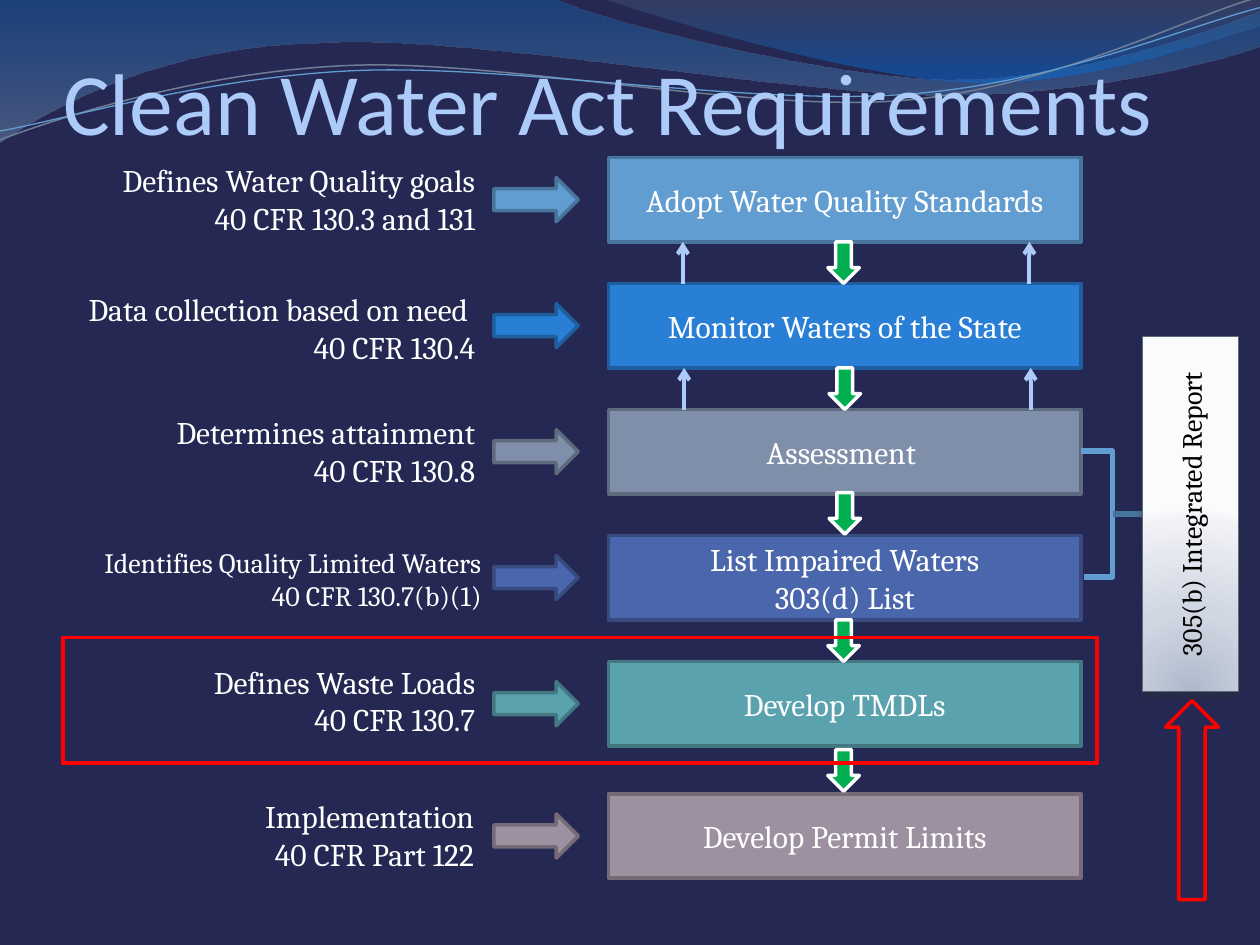
from math import cos, radians, sin

from pptx import Presentation
from pptx.dml.color import RGBColor
from pptx.enum.shapes import MSO_CONNECTOR, MSO_SHAPE
from pptx.enum.text import MSO_ANCHOR, PP_ALIGN
from pptx.oxml import parse_xml
from pptx.oxml.ns import nsdecls, qn
from pptx.util import Pt

PX = 9144
INK = {
    "back": "242852", "title": "ACCBF9", "white": "FFFFFF", "black": "000000",
    "green": "00B050", "red": "FF0000", "link": "629DD1", "stub": "47749C",
    "rim": "5D6A7D", "shade": "2C323C", "gray": "707E95",
    "adopt": "629DD1", "adopt rim": "49749B",
    "watch": "297FD5", "watch rim": "1E5E9E",
    "assess": "7F8FA9", "assess rim": "5E6A7D",
    "list": "4A66AC", "list rim": "374B7F",
    "load": "5AA2AE", "load rim": "437881",
    "permit": "9D90A0", "permit rim": "746B76",
}
RGB = {name: RGBColor.from_string(code) for name, code in INK.items()}

deck = Presentation()
deck.slide_width, deck.slide_height = 1000 * PX, 750 * PX
slide = deck.slides.add_slide(deck.slide_layouts[5])
slide.background.fill.solid()
slide.background.fill.fore_color.rgb = RGB["back"]
shapes = slide.shapes


def form(kind, spot, fill, edge, wide=2):
    shape = shapes.add_shape(kind, *[n * PX for n in spot])
    shape.shadow.inherit = False
    if fill:
        shape.fill.solid()
        shape.fill.fore_color.rgb = RGB[fill]
    else:
        shape.fill.background()
    shape.line.color.rgb = RGB[edge]
    shape.line.width = Pt(wide)
    return shape


def write(shape, lines, size, align, ink="white", font="Cambria"):
    frame = shape.text_frame
    frame.word_wrap = True
    for i, line in enumerate(lines):
        para = frame.add_paragraph() if i else frame.paragraphs[0]
        para.alignment = align
        run = para.add_run()
        run.text = line
        run.font.size = Pt(size)
        run.font.name = font
        run.font.color.rgb = RGB[ink]
    return frame


DOWN = '<a:lin ang="5400000" scaled="0"/>'
waves = [
    ((-1, -1, 1002, 114), 0,
     [("M", 0, 0), ("L", 440, -1), ("C", 476, 17, 664, 63, 758, 63),
      ("C", 853, 63, 958, 26, 1000, 9), ("L", 1001, 36), ("C", 983, 44, 870, 76, 746, 75),
      ("C", 622, 75, 382, 28, 257, 34), ("C", 129, 36, 46, 83, -1, 113), ("L", 0, 0), ("Z",)],
     [(0, "125EAA", 45), (100, "697FA4", 55)], None, 0),
    ((479, -1, 521, 70), 0,
     [("M", 479, -1), ("C", 509, 11, 682, 62, 769, 65), ("C", 856, 69, 961, 32, 1000, 21),
      ("L", 1000, 0), ("L", 479, -1), ("Z",)],
     [(0, "596982", 30), (80, "0670DA", 45)], None, 0),
    ((-2, 22, 1002, 71), -2.7,
     [("M", 0, 111), ("C", 48, 93, 158, 57, 277, 52), ("C", 395, 47, 593, 89, 713, 80),
      ("C", 833, 71, 938, 15, 998, -2)], None, "gray", 0.85),
    ((-2, 30, 1003, 58), -2.7,
     [("M", 0, 104), ("C", 47, 96, 164, 61, 283, 56), ("C", 403, 51, 597, 84, 717, 75),
      ("C", 836, 67, 941, 21, 1000, 6)], None, "link", 0.75),
]
TAGS = {"M": "moveTo", "L": "lnTo", "C": "cubicBezTo", "Z": "close"}
master = deck.slide_master.shapes._spTree
blends = []
for rank, (spot, turn, moves, stops, edge, wide) in enumerate(waves):
    left, top, width, height = spot
    mx, my, bend = left + width / 2, top + height / 2, radians(-turn)
    track = ""
    for tag, *nums in moves:
        dots = ""
        for x, y in zip(nums[::2], nums[1::2]):
            px = mx + (x - mx) * cos(bend) - (y - my) * sin(bend) - left
            py = my + (x - mx) * sin(bend) + (y - my) * cos(bend) - top
            dots += f'<a:pt x="{round(px * PX)}" y="{round(py * PX)}"/>'
        track += f"<a:{TAGS[tag]}>{dots}</a:{TAGS[tag]}>"
    pen = shapes.build_freeform(left, top, scale=PX)
    pen.add_line_segments([(left + width, top + height)], close=False)
    wave = pen.convert_to_shape()
    geom = wave._element.spPr.find(qn("a:custGeom"))
    geom.replace(geom.find(qn("a:pathLst")), parse_xml(
        f'<a:pathLst {nsdecls("a")}><a:path w="{width * PX}" h="{height * PX}">'
        f'{track}</a:path></a:pathLst>'))
    wave.rotation = turn
    wave.shadow.inherit = False
    wave.fill.background()
    if stops:
        wave.line.fill.background()
        blends.append((wave, stops, DOWN))
    else:
        wave.line.color.rgb = RGB[edge]
        wave.line.width = Pt(wide)
    wave._element.nvSpPr.cNvPr.set("id", str(100 + rank))
    master.insert(2 + rank, wave._element)

title = shapes.title
title.left, title.top, title.width, title.height = [n * PX for n in (50, 33, 900, 108)]
frame = write(title, ["Clean Water Act Requirements"], 50, PP_ALIGN.LEFT, "title", "Calibri")
frame.vertical_anchor = MSO_ANCHOR.TOP
frame.margin_left = frame.margin_right = frame.margin_bottom = 0
frame.margin_top = 5 * PX

steps = [
    ("adopt", 125, ["Adopt Water Quality Standards"], (63, 123, 324, 71), 18,
     ["Defines Water Quality goals", "40 CFR 130.3 and 131"]),
    ("watch", 225, ["Monitor Waters of the State"], (0, 225, 387, 71), 18,
     ["Data collection based on need ", "40 CFR 130.4"]),
    ("assess", 325, ["Assessment "], (0, 323, 387, 71), 18,
     ["Determines attainment", "40 CFR 130.8"]),
    ("list", 425, ["List Impaired Waters", "303(d) List"], (0, 428, 392, 64), 16,
     ["Identifies Quality Limited Waters", "40 CFR 130.7(b)(1)"]),
    ("load", 525, ["Develop TMDLs"], (45, 521, 342, 71), 18,
     ["Defines Waste Loads", "40 CFR 130.7"]),
    ("permit", 630, ["Develop Permit Limits"], (44, 628, 342, 71), 18,
     ["Implementation", "40 CFR Part 122"]),
]
for tone, top, name, spot, size, note in steps:
    box = form(MSO_SHAPE.RECTANGLE, (483, top, 375, 67), tone, tone + " rim")
    write(box, name, 18, PP_ALIGN.CENTER).vertical_anchor = MSO_ANCHOR.MIDDLE
    form(MSO_SHAPE.RIGHT_ARROW, (392, top + 16, 67, 35), tone, tone + " rim")
    label = shapes.add_textbox(*[n * PX for n in spot])
    write(label, note, size, PP_ALIGN.RIGHT)

for x, y in [(657, 192), (658, 292), (658, 391), (657, 492), (657, 595)]:
    form(MSO_SHAPE.DOWN_ARROW, (x, y, 25, 33), "green", "white")

STRAIGHT, ELBOW = MSO_CONNECTOR.STRAIGHT, MSO_CONNECTOR.ELBOW
links = [(STRAIGHT, (x, y, x, y - 33), "title", 2.25)
         for x, y in [(817, 225), (542, 225), (818, 325), (543, 325)]]
links += [(ELBOW, (858, 358, 860, 458), "link", 3), (STRAIGHT, (883, 408, 908, 408), "stub", 3)]
for kind, ends, tone, wide in links:
    link = shapes.add_connector(kind, *[n * PX for n in ends])
    link.line.color.rgb = RGB[tone]
    link.line.width = Pt(wide)
    props = link._element.spPr
    props.append(parse_xml(f'<a:effectLst {nsdecls("a")}/>'))
    if tone == "title":
        props.find(qn("a:ln")).append(parse_xml(f'<a:tailEnd {nsdecls("a")} type="arrow"/>'))
    if kind == ELBOW:
        props.find(qn("a:prstGeom")).find(qn("a:avLst")).append(
            parse_xml(f'<a:gd {nsdecls("a")} name="adj1" fmla="val 1250000"/>'))

report = form(MSO_SHAPE.RECTANGLE, (804, 370, 282, 76), None, "rim", 0.75)
report.rotation = 270
write(report, ["305(b) Integrated Report"], 16, PP_ALIGN.CENTER,
      "black").vertical_anchor = MSO_ANCHOR.MIDDLE
report._element.spPr.find(qn("a:effectLst")).append(parse_xml(
    f'<a:outerShdw {nsdecls("a")} blurRad="57150" dist="38100" dir="5400000" rotWithShape="0">'
    f'<a:srgbClr val="{INK["shade"]}"><a:alpha val="48000"/></a:srgbClr></a:outerShdw>'))
blends.append((
    report,
    [(0, "AFB9CB", 100), (43, "D0D6E2", 100), (93, "F0F2F6", 100), (100, "FAFBFC", 100)],
    '<a:path path="circle"><a:fillToRect l="50000" t="130000" r="50000" b="-30000"/></a:path>'))

for shape, stops, way in blends:
    marks = "".join(
        f'<a:gs pos="{at * 1000}"><a:srgbClr val="{code}"><a:alpha val="{clear * 1000}"/>'
        f'</a:srgbClr></a:gs>' for at, code, clear in stops)
    props = shape._element.spPr
    props.replace(props.find(qn("a:noFill")), parse_xml(
        f'<a:gradFill {nsdecls("a")} rotWithShape="1"><a:gsLst>{marks}</a:gsLst>{way}</a:gradFill>'))

form(MSO_SHAPE.RECTANGLE, (50, 506, 821, 100), None, "red", 2.25)
form(MSO_SHAPE.DOWN_ARROW, (925, 556, 42, 158), None, "red").rotation = 180

deck.save("out.pptx")
